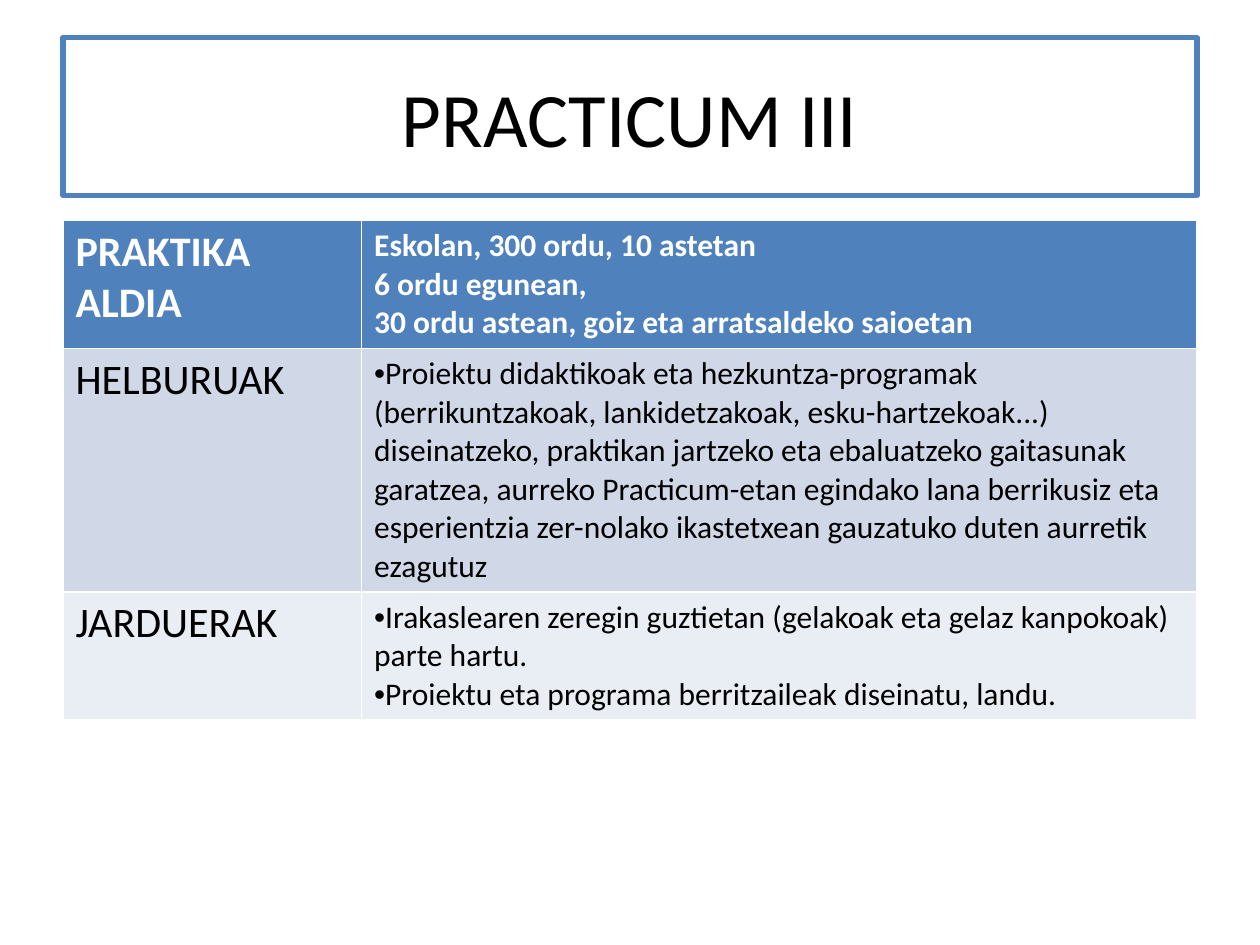
from pptx import Presentation
from pptx.util import Inches, Pt
from pptx.dml.color import RGBColor
from pptx.enum.text import PP_ALIGN as Align, MSO_ANCHOR as Anchor
from lxml.etree import SubElement

BLUE, WHITE, BLACK = "4F81BD", "FFFFFF", "000000"


def color(code):
    return RGBColor.from_string(code)


def write(frame, *lines, size=18, ink=BLACK, bold=False, align=None, bullet=None):
    for i, line in enumerate(lines):
        para = frame.paragraphs[0] if i == 0 else frame.add_paragraph()
        if align is not None:
            para.alignment = align
        if bullet:
            props = para._p.get_or_add_pPr()
            props.set("marL", "0")
            props.set("indent", "0")
            space = props.nsmap["a"]
            SubElement(props, f"{{{space}}}buFont", typeface="Arial")
            SubElement(props, f"{{{space}}}buChar", char=bullet)
        run = para.add_run()
        run.text = line
        font = run.font
        font.name, font.size, font.bold = "Calibri", Pt(size), bold
        font.color.rgb = color(ink)


prs = Presentation()
prs.slide_width, prs.slide_height = Inches(10), Inches(7.5)
slide = prs.slides.add_slide(prs.slide_layouts[5])

title = slide.shapes.title
title.left, title.top = Inches(0.5), Inches(0.3)
title.width, title.height = Inches(9), Inches(1.25)
title.line.color.rgb = color(BLUE)
title.line.width = Pt(3)
title.text_frame.vertical_anchor = Anchor.MIDDLE
write(title.text_frame, "PRACTICUM III", size=44, align=Align.CENTER)

rows = [
    ("PRAKTIKA ALDIA", BLUE, [
        "Eskolan, 300 ordu, 10 astetan",
        "6 ordu egunean,",
        "30 ordu astean, goiz eta arratsaldeko saioetan"]),
    ("HELBURUAK", "D0D8E8", [
        "Proiektu didaktikoak eta hezkuntza-programak "
        "(berrikuntzakoak, lankidetzakoak, esku-hartzekoak...) "
        "diseinatzeko, praktikan jartzeko eta ebaluatzeko gaitasunak "
        "garatzea, aurreko Practicum-etan egindako lana berrikusiz eta "
        "esperientzia zer-nolako ikastetxean gauzatuko duten aurretik "
        "ezagutuz"]),
    ("JARDUERAK", "E9EDF4", [
        "Irakaslearen zeregin guztietan (gelakoak eta gelaz kanpokoak) "
        "parte hartu.",
        "Proiektu eta programa berritzaileak diseinatu, landu."]),
]

# The default table style draws the white borders; rows grow to fit their text.
grid = slide.shapes.add_table(len(rows), 2, Inches(0.5), Inches(1.75),
                              Inches(9), Inches(3.9))
table = grid.table
for col, width in zip(table.columns, (2.37, 6.63)):
    col.width = Inches(width)

for r, (label, fill, lines) in enumerate(rows):
    table.rows[r].height = Inches(0.41)
    head = r == 0
    ink = WHITE if head else BLACK
    left, right = table.cell(r, 0), table.cell(r, 1)
    for cell in (left, right):
        cell.fill.solid()
        cell.fill.fore_color.rgb = color(fill)
    write(left.text_frame, label, size=24, ink=ink, bold=head)
    write(right.text_frame, *lines, ink=ink, bold=head,
          bullet=None if head else "•")
grid.height = Inches(3.9)

prs.save("out.pptx")
